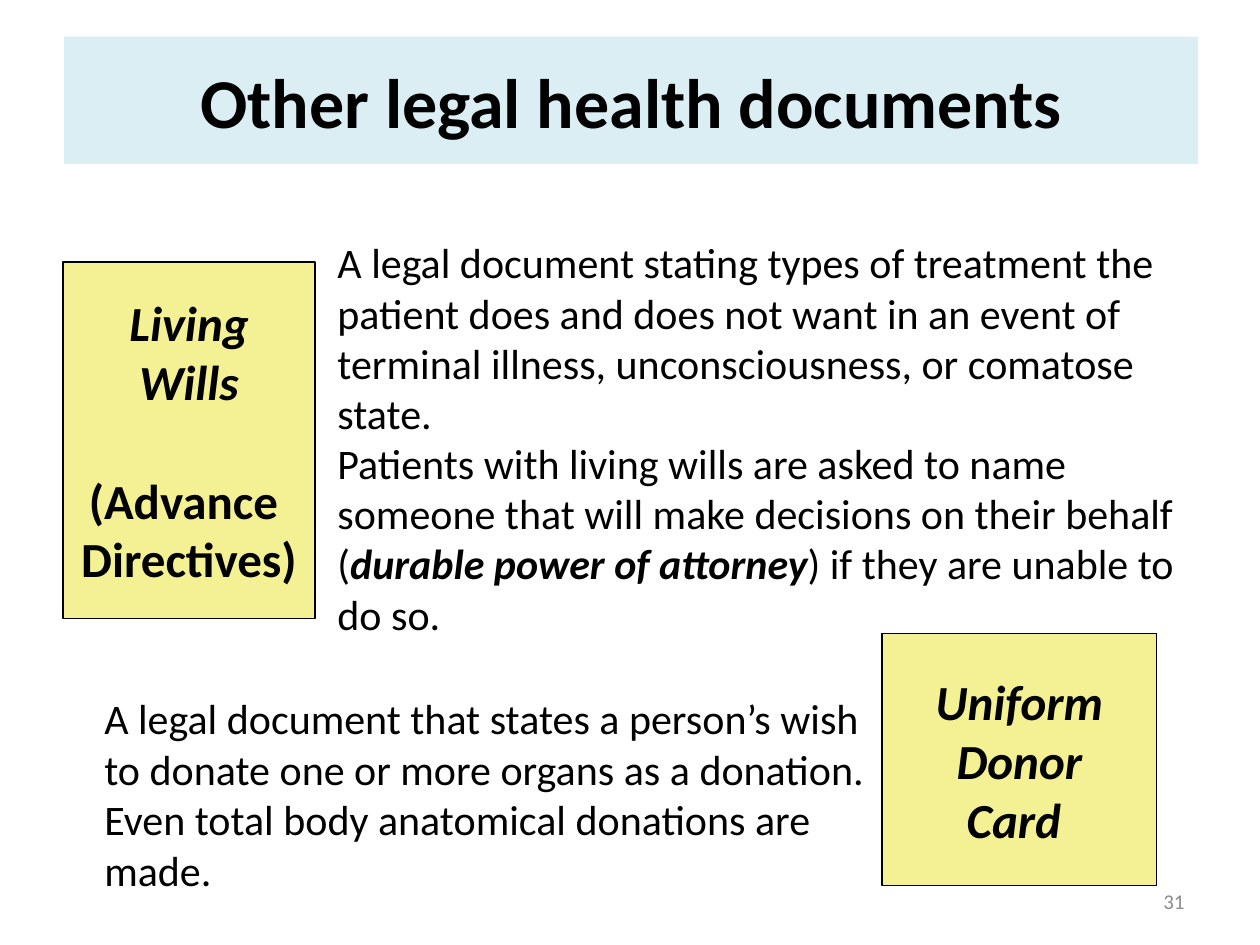
from pptx import Presentation
from pptx.dml.color import RGBColor
from pptx.enum.shapes import MSO_SHAPE as Shape
from pptx.enum.text import MSO_ANCHOR as Anchor, PP_ALIGN as Align
from pptx.util import Inches, Pt

COLORS = {
    "text": "000000",
    "banner": "DBEEF4",
    "card": "F3F193",
    "number": "8C8C8C",
}


def rgb(name):
    return RGBColor.from_string(COLORS[name])


class DocumentSlide:
    """Holds the style and the slide being built."""

    font_name = "Calibri"
    body_size, card_size, title_size, number_size = 24, 28, 40, 12

    def __init__(self, slide):
        self.slide = slide

    def set_text(self, paragraph, runs, size, color="text", align=Align.LEFT,
                 bold=False, italic=False):
        """Fill a paragraph; runs are (text, emphasised) pairs."""
        paragraph.alignment = align
        font = paragraph.font
        font.name, font.size = self.font_name, Pt(size)
        font.bold, font.italic = bold, italic
        font.color.rgb = rgb(color)
        for text, emphasised in runs:
            run = paragraph.add_run()
            run.text = text
            if emphasised:
                run.font.bold = run.font.italic = True

    def box(self, place, fill, outline=None):
        box = self.slide.shapes.add_shape(Shape.RECTANGLE, *map(Inches, place))
        box.shadow.inherit = False
        box.fill.solid()
        box.fill.fore_color.rgb = rgb(fill)
        if outline:
            box.line.color.rgb = rgb(outline)
            box.line.width = Pt(0.75)
        else:
            box.line.fill.background()
        box.text_frame.vertical_anchor = Anchor.MIDDLE
        return box.text_frame

    def title(self, place, text):
        frame = self.box(place, "banner")
        self.set_text(frame.paragraphs[0], [(text, False)], self.title_size,
                      align=Align.CENTER, bold=True)

    def card(self, place, lines):
        """Draw a term card; lines are (text, italic, space before)."""
        frame = self.box(place, "card", outline="text")
        frame.word_wrap = False
        for index, (text, italic, gap) in enumerate(lines):
            line = frame.add_paragraph() if index else frame.paragraphs[0]
            if gap:
                line.space_before = Pt(gap)
            self.set_text(line, [(text, False)], self.card_size,
                          align=Align.CENTER, bold=True, italic=italic)

    def text_box(self, place, anchor=Anchor.TOP):
        frame = self.slide.shapes.add_textbox(*map(Inches, place)).text_frame
        frame.word_wrap = True
        frame.vertical_anchor = anchor
        return frame.paragraphs[0]

    def definition(self, place, *runs):
        self.set_text(self.text_box(place), runs, self.body_size)

    def page_number(self, place, text):
        self.set_text(self.text_box(place, Anchor.MIDDLE), [(text, False)],
                      self.number_size, color="number", align=Align.RIGHT)


def main():
    deck = Presentation()
    deck.slide_width, deck.slide_height = Inches(10), Inches(7.5)
    page = DocumentSlide(deck.slides.add_slide(deck.slide_layouts[6]))

    # Page number and title
    page.page_number((7.17, 6.95, 2.33, 0.4), "31")
    page.title((0.51, 0.29, 9, 1.01), "Other legal health documents")

    # Living wills
    page.card((0.5, 2.08, 2, 2.83), [
        ("Living", True, 0),
        ("Wills", True, 0),
        ("(Advance ", False, 34),
        ("Directives)", False, 0),
    ])
    page.definition(
        (2.58, 1.83, 7.08, 1.7),
        ("A legal document stating types of treatment the patient does and "
         "does not want in an event of terminal illness, unconsciousness, "
         "or comatose state.", False))
    page.definition(
        (2.58, 3.42, 7, 1.7),
        ("Patients with living wills are asked to name someone that will "
         "make decisions on their behalf (", False),
        ("durable power of attorney", True),
        (") if they are unable to do so.", False))

    # Uniform donor card
    page.card((7, 5.03, 2.18, 2), [
        (word, True, 0) for word in ("Uniform", "Donor", "Card ")])
    page.definition(
        (0.73, 5.45, 6.27, 1.72),
        ("A legal document that states a person’s wish to donate one or "
         "more organs as a donation. Even total body anatomical donations "
         "are made.", False))

    deck.save("out.pptx")


if __name__ == "__main__":
    main()
